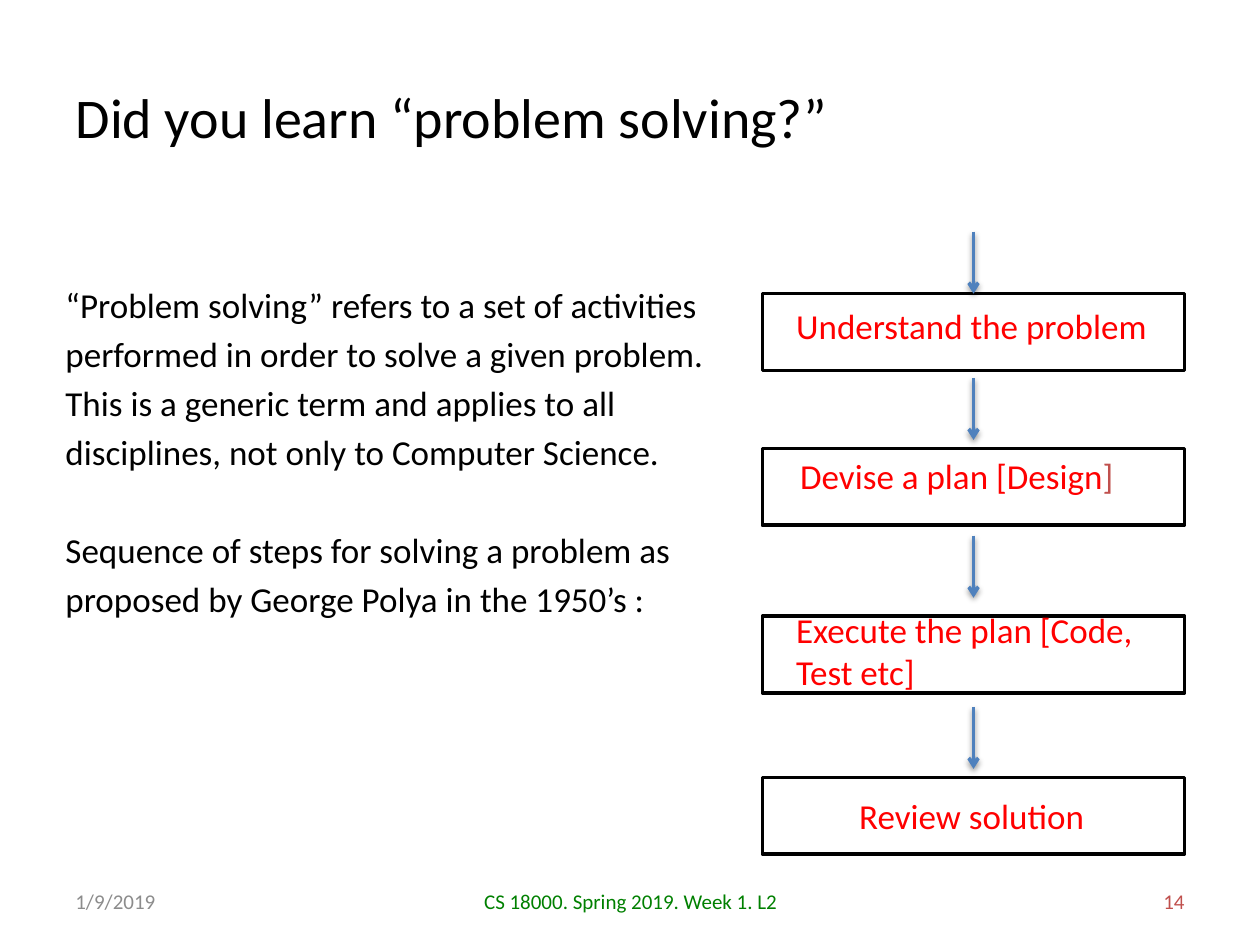
import pptx
import pptx.dml.color
import pptx.enum.shapes
import pptx.enum.text
import pptx.oxml
import pptx.oxml.ns
import pptx.util
from pptx.util import Cm, Pt

RGB = pptx.dml.color.RGBColor
BLACK = RGB(0x00, 0x00, 0x00)
WHITE = RGB(0xFF, 0xFF, 0xFF)
RED = RGB(0xFF, 0x00, 0x00)
BRICK = RGB(0xC0, 0x50, 0x4D)
BLUE = RGB(0x4F, 0x81, 0xBD)
GREEN = RGB(0x00, 0x80, 0x00)
GREY = RGB(0x8C, 0x8C, 0x8C)
FONT = "Calibri"
ALIGN = pptx.enum.text.PP_ALIGN
MIDDLE = pptx.enum.text.MSO_ANCHOR.MIDDLE

STEP_HEIGHT = 1.55
ARROW_LENGTH = 1.25
# step top, arrow start above the top, label (dx, dy, width, height), label text
STEPS = [
    (5.92, 1.25, (0.43, 0.1, 8.51, 1.12), "Understand the problem"),
    (9.04, 1.42, (0.51, 0, 8.51, 1.12), "Devise a plan [Design"),
    (12.42, 1.62, (0.43, -0.28, 8.51, 1.96), "Execute the plan [Code,\vTest etc]"),
    (15.67, 1.42, (1.7, 0.23, 5.13, 1.12), "Review solution"),
]
SHADOW = (
    '<a:effectLst xmlns:a="http://schemas.openxmlformats.org/drawingml/2006/main">'
    '<a:outerShdw blurRad="40000" dist="20000" dir="5400000" rotWithShape="0">'
    '<a:srgbClr val="000000"><a:alpha val="38000"/></a:srgbClr>'
    '</a:outerShdw></a:effectLst>'
)


def style(para, size, colour, align=ALIGN.LEFT):
    para.alignment = align
    para.font.name = FONT
    para.font.size = Pt(size)
    para.font.color.rgb = colour


def add_text(page, box, paragraphs, size, colour, align=ALIGN.LEFT):
    """Add a wrapping text box, one paragraph per string; box is in cm."""
    frame = page.shapes.add_textbox(*map(Cm, box)).text_frame
    frame.word_wrap = True
    frame.text = "\n".join(paragraphs)
    for para in frame.paragraphs:
        style(para, size, colour, align)
    return frame


def add_title(page, box, text):
    title = page.shapes.title
    title.left, title.top, title.width, title.height = map(Cm, box)
    title.text_frame.text = text
    title.text_frame.vertical_anchor = MIDDLE
    style(title.text_frame.paragraphs[0], 32, BLACK)


def add_explanation(page, box):
    frame = add_text(page, box, [
        "“Problem solving” refers to a set of activities performed in order to "
        "solve a given problem. This is a generic term and applies to all "
        "disciplines, not only to Computer Science.",
        "Sequence of steps for solving a problem as proposed by George Polya "
        "in the 1950’s :",
    ], 20, BLACK)
    for para in frame.paragraphs:
        para.line_spacing = Pt(28)
    frame.paragraphs[1].space_before = Pt(28)


def add_arrow(page, x, top):
    arrow = page.shapes.add_connector(
        pptx.enum.shapes.MSO_CONNECTOR.STRAIGHT,
        Cm(x), Cm(top), Cm(x), Cm(top + ARROW_LENGTH))
    arrow.line.color.rgb = BLUE
    arrow.line.width = Pt(2)
    line = arrow.line._get_or_add_ln()
    line.makeelement(pptx.oxml.ns.qn("a:tailEnd"), {})
    tail = line.makeelement(pptx.oxml.ns.qn("a:tailEnd"), {"type": "arrow"})
    line.append(tail)
    line.getparent().append(pptx.oxml.parse_xml(SHADOW))
    return arrow


def add_step_flow(page, left, width):
    """Stack the steps, each with its label and the arrow that leads to it."""
    for top, lead, (dx, dy, label_width, label_height), text in STEPS:
        step = page.shapes.add_shape(
            pptx.enum.shapes.MSO_SHAPE.RECTANGLE,
            Cm(left), Cm(top), Cm(width), Cm(STEP_HEIGHT))
        step.shadow.inherit = False
        step.fill.solid()
        step.fill.fore_color.rgb = WHITE
        step.line.color.rgb = BLACK
        step.line.width = Pt(2)

        label_box = (left + dx, top + dy, label_width, label_height)
        label = add_text(page, label_box, [text], 20, RED)
        if text.endswith("[Design"):
            span = label.paragraphs[0].add_run()
            span.text = "]"
            span.font.color.rgb = BRICK

        arrow = add_arrow(page, left + width / 2, top - lead)
        if lead == ARROW_LENGTH:
            arrow.end_connect(step, 0)


def add_footer(page, top, height):
    for left, width, text, colour, align in [
        (1.27, 5.92, "1/9/2019", GREY, ALIGN.LEFT),
        (8.69, 8.05, "CS 18000. Spring 2019. Week 1. L2", GREEN, ALIGN.CENTER),
        (18.21, 5.92, "14", BRICK, ALIGN.RIGHT),
    ]:
        frame = add_text(page, (left, top, width, height), [text], 12, colour, align)
        frame.vertical_anchor = MIDDLE


def main():
    deck = pptx.Presentation()
    deck.slide_width, deck.slide_height = Cm(25.4), Cm(19.05)
    page = deck.slides.add_slide(deck.slide_layouts[5])
    add_title(page, (1.27, 0.76, 22.86, 3.18), "Did you learn “problem solving?”")
    add_explanation(page, (1.07, 5.44, 13.74, 7.21))
    add_step_flow(page, 15.37, 8.51)
    add_footer(page, 17.65, 1.02)
    deck.save("out.pptx")


if __name__ == "__main__":
    main()
